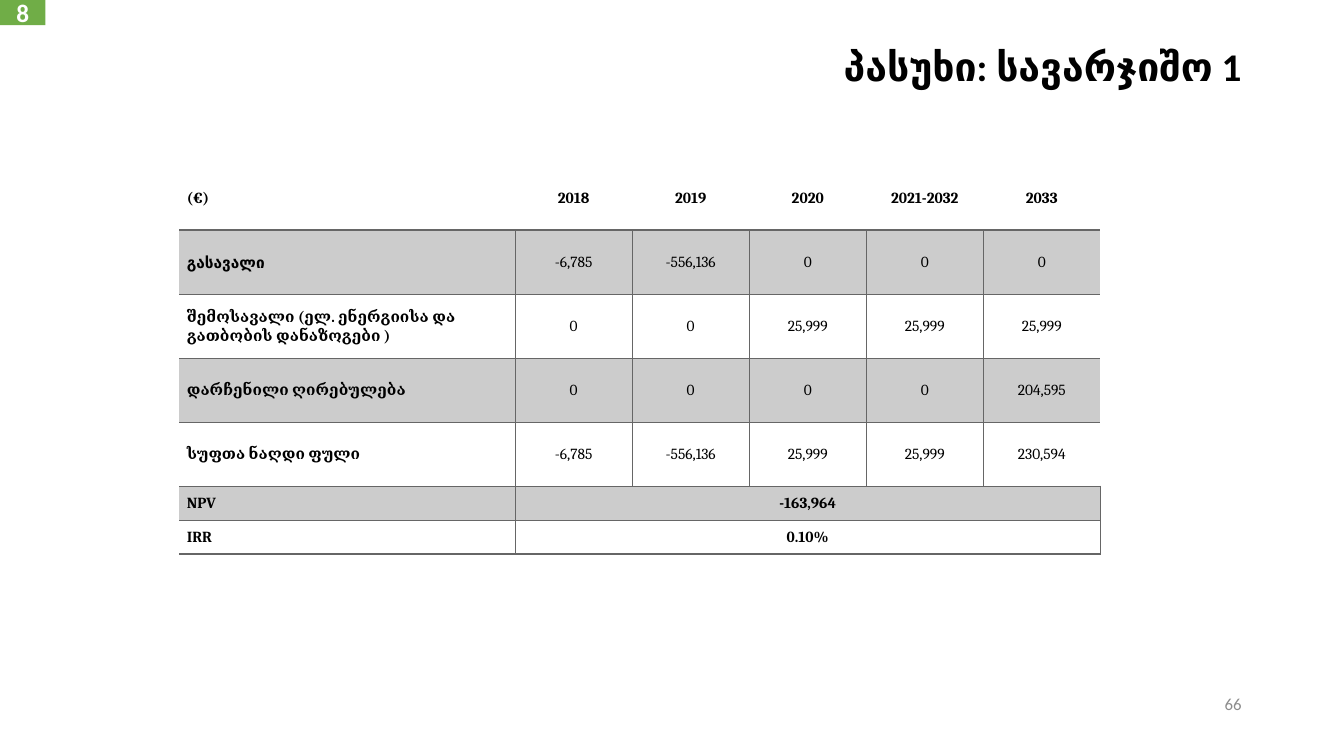
"""Build the slide with the cash flow answer to exercise 1."""
from dataclasses import dataclass

from lxml import etree
from pptx import Presentation
from pptx.dml.color import RGBColor
from pptx.enum import shapes, text
from pptx.oxml import ns
from pptx.util import Pt


@dataclass(frozen=True)
class Theme:
    sans: str = "Calibri"
    serif: str = "Cambria"
    black: str = "000000"
    white: str = "FFFFFF"
    green: str = "70AD47"
    band: str = "CCCCCC"
    rule: str = "666666"
    muted: str = "8C8C8C"
    title: int = 28
    badge: int = 18
    number: int = 12
    table: int = 11


THEME = Theme()
ALIGN = text.PP_ALIGN
MIDDLE = text.MSO_ANCHOR.MIDDLE
ROWS = [
    ["(€)", "2018", "2019", "2020", "2021-2032", "2033"],
    ["გასავალი", "-6,785", "-556,136", "0", "0", "0"],
    ["შემოსავალი (ელ. ენერგიისა და გათბობის დანაზოგები )",
     "0", "0", "25,999", "25,999", "25,999"],
    ["დარჩენილი ღირებულება", "0", "0", "0", "0", "204,595"],
    ["სუფთა ნაღდი ფული", "-6,785", "-556,136", "25,999", "25,999", "230,594"],
    ["NPV", "-163,964"],
    ["IRR", "0.10%"],
]


def write(tf, words, size, color, align, bold=False, font=THEME.sans, spacing=None):
    """Put one formatted paragraph in a text frame."""
    tf.text = words
    p = tf.paragraphs[0]
    p.alignment = align
    p.line_spacing = spacing
    p.font.name = font
    p.font.size = Pt(size)
    p.font.bold = bold
    p.font.color.rgb = RGBColor.from_string(color)


def add_title(s, words):
    """Place and fill the title placeholder."""
    sp = s.shapes.title
    sp.left, sp.top, sp.width, sp.height = Pt(66), Pt(28.8), Pt(828), Pt(41)
    tf = sp.text_frame
    tf.auto_size = text.MSO_AUTO_SIZE.NONE
    tf.vertical_anchor = MIDDLE
    write(tf, words, THEME.title, THEME.black, ALIGN.RIGHT, True, spacing=0.9)


def add_badge(s, words):
    """Draw the green section badge in the corner."""
    sp = s.shapes.add_shape(shapes.MSO_SHAPE.RECTANGLE, 0, 0, Pt(32.4), Pt(18))
    sp.shadow.inherit = False
    sp.fill.solid()
    sp.fill.fore_color.rgb = RGBColor.from_string(THEME.green)
    sp.line.fill.background()
    tf = sp.text_frame
    tf.vertical_anchor = MIDDLE
    write(tf, words, THEME.badge, THEME.white, ALIGN.CENTER, True)


def add_page_number(s, words):
    """Write the page number at the lower right."""
    sp = s.shapes.add_textbox(Pt(678), Pt(488), Pt(216), Pt(28.8))
    tf = sp.text_frame
    tf.word_wrap = True
    tf.vertical_anchor = MIDDLE
    write(tf, words, THEME.number, THEME.muted, ALIGN.RIGHT)


def set_border(cell, side, width):
    """Draw one cell border, or clear it when the width is zero."""
    ln = etree.SubElement(cell._tc.get_or_add_tcPr(), ns.qn(f"a:ln{side}"), w=str(Pt(width)))
    if width:
        fill = etree.SubElement(ln, ns.qn("a:solidFill"))
        etree.SubElement(fill, ns.qn("a:srgbClr"), val=THEME.rule)
    else:
        etree.SubElement(ln, ns.qn("a:noFill"))


def style_cell(cell, i, j, last):
    """Set the borders, fill and margins of the cell in row i and column j."""
    top = {0: 0, 1: 1.5}.get(i, 1)
    bottom = 1.5 if i == 0 else 1
    left = 1 if i and j else 0
    right = 1 if i and j < last else 0
    for side, width in zip("LRTB", (left, right, top, bottom)):
        set_border(cell, side, width)
    cell.fill.solid()
    cell.fill.fore_color.rgb = RGBColor.from_string(THEME.band if i % 2 else THEME.white)
    cell.vertical_anchor = MIDDLE
    cell.margin_left = cell.margin_right = Pt(5.4)
    cell.margin_top = cell.margin_bottom = 0


def add_cash_table(s, rows):
    """Build the cash flow table; short rows span all year columns."""
    count = len(rows[0])
    last = count - 1
    frame = s.shapes.add_table(len(rows), count, Pt(128), Pt(118.8), Pt(658), Pt(277))
    table = frame.table
    for j, col in enumerate(table.columns):
        col.width = Pt(83.6 if j else 240)
    for i, row in enumerate(rows):
        spanned = len(row) < count
        table.rows[i].height = Pt(24.25 if spanned else 45.7)
        for j in range(count):
            style_cell(table.cell(i, j), i, j, last)
        if spanned:
            table.cell(i, 1).merge(table.cell(i, last))
        for j, words in enumerate(row):
            bold = i == 0 or j == 0 or spanned
            align = ALIGN.CENTER if j else ALIGN.LEFT
            font = THEME.sans if (i, j) == (1, 0) else THEME.serif
            write(table.cell(i, j).text_frame, words, THEME.table, THEME.black,
                  align, bold, font, 1.07)


def main():
    """Create and save the slide."""
    prs = Presentation()
    prs.slide_width, prs.slide_height = Pt(960), Pt(540)
    s = prs.slides.add_slide(prs.slide_layouts[5])
    add_page_number(s, "66")
    add_title(s, "პასუხი: სავარჯიშო 1")
    add_badge(s, "8")
    add_cash_table(s, ROWS)
    prs.save("out.pptx")


if __name__ == "__main__":
    main()
